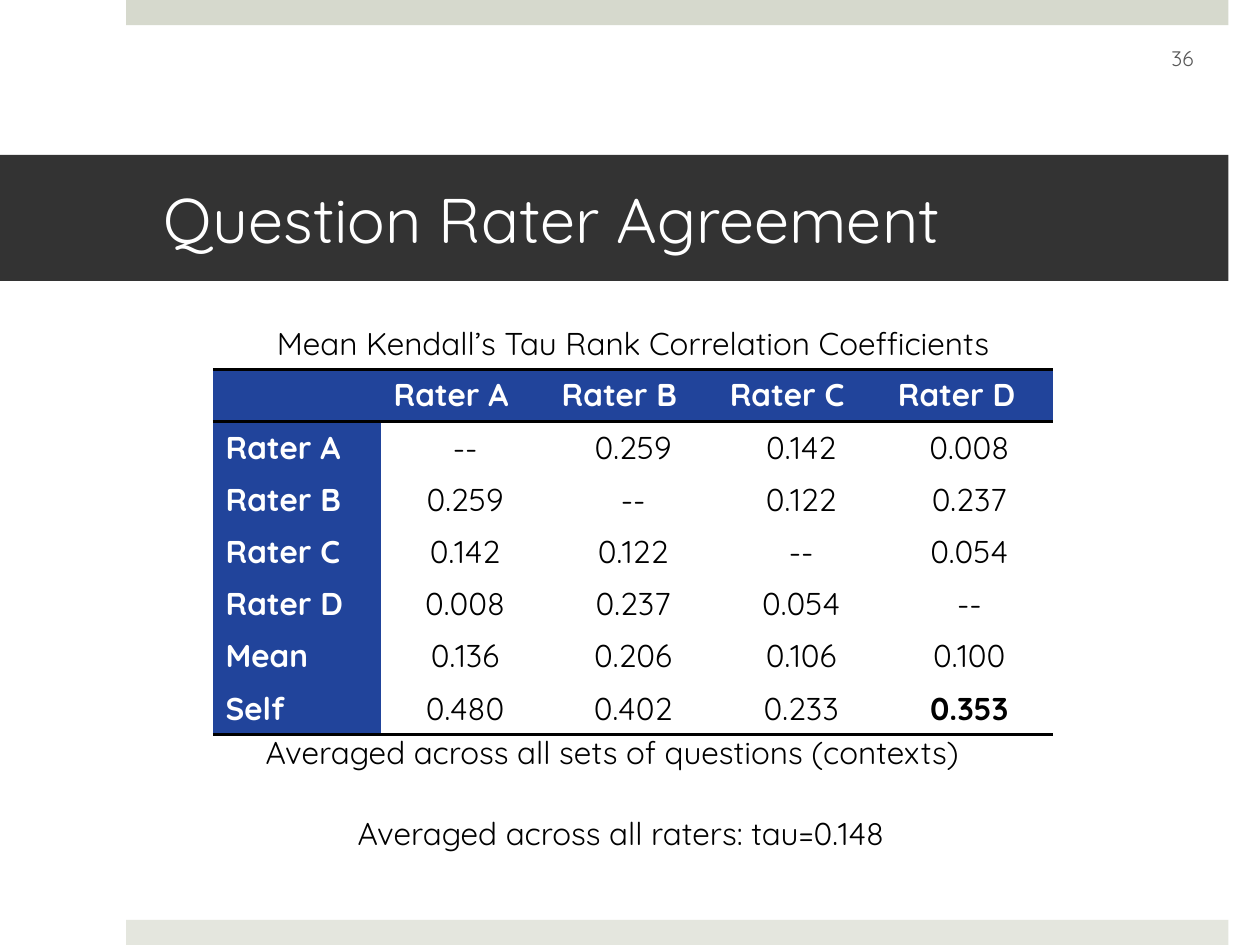
from lxml import etree
from pptx import Presentation
from pptx.dml.color import RGBColor
from pptx.enum.shapes import MSO_SHAPE
from pptx.enum.text import MSO_ANCHOR, PP_ALIGN
from pptx.oxml.ns import qn
from pptx.util import Inches, Pt

RECT = MSO_SHAPE.RECTANGLE
MIDDLE = MSO_ANCHOR.MIDDLE
LEFT, CENTER = PP_ALIGN.LEFT, PP_ALIGN.CENTER

FONT = "Quicksand"
WHITE, BLACK, BLUE = "FFFFFF", "000000", "21449B"
RULE_WIDTH = 2

RATERS = ["Rater A", "Rater B", "Rater C", "Rater D"]
ROWS = [
    [""] + RATERS,
    ["Rater A", "--", "0.259", "0.142", "0.008"],
    ["Rater B", "0.259", "--", "0.122", "0.237"],
    ["Rater C", "0.142", "0.122", "--", "0.054"],
    ["Rater D", "0.008", "0.237", "0.054", "--"],
    ["Mean", "0.136", "0.206", "0.106", "0.100"],
    ["Self", "0.480", "0.402", "0.233", "0.353"],
]
BEST = "0.353"
RULED_EDGES = {0, 1, len(ROWS)}  # horizontal edges, counted from the top


def rgb(color):
    return RGBColor.from_string(color)


def set_text(tf, text, size, color, align=LEFT, bold=False):
    tf.text = text
    p = tf.paragraphs[0]
    p.alignment = align
    for r in p.runs:
        r.font.name = FONT
        r.font.size = Pt(size)
        r.font.bold = bold
        r.font.color.rgb = rgb(color)


def add_bar(slide, left, top, width, height, color):
    sp = slide.shapes.add_shape(RECT, *map(Inches, (left, top, width, height)))
    sp.shadow.inherit = False
    sp.fill.solid()
    sp.fill.fore_color.rgb = rgb(color)
    sp.line.fill.background()
    return sp


def add_label(slide, text, left, top, width, size=18, color=BLACK,
              align=CENTER, wrap=True):
    sp = slide.shapes.add_textbox(*map(Inches, (left, top, width, 0.4)))
    sp.text_frame.word_wrap = wrap
    set_text(sp.text_frame, text, size, color, align)
    return sp


def set_borders(cell, ruled_sides):
    """Draw black rules on the given sides and clear the others."""
    tc_pr = cell._tc.get_or_add_tcPr()
    for i, side in enumerate("LRTB"):
        ln = etree.Element(qn(f"a:ln{side}"), w=str(Pt(RULE_WIDTH)))
        if side in ruled_sides:
            fill = etree.SubElement(ln, qn("a:solidFill"))
            etree.SubElement(fill, qn("a:srgbClr"), val=BLACK)
        else:
            etree.SubElement(ln, qn("a:noFill"))
        tc_pr.insert(i, ln)


def add_rater_table(slide, left, top, width, height):
    n_rows, n_cols = len(ROWS), len(ROWS[0])
    box = map(Inches, (left, top, width, height))
    table = slide.shapes.add_table(n_rows, n_cols, *box).table
    table.horz_banding = False
    for i, values in enumerate(ROWS):
        for j, value in enumerate(values):
            cell = table.cell(i, j)
            heading = i == 0 or j == 0
            cell.fill.solid()
            cell.fill.fore_color.rgb = rgb(BLUE if heading else WHITE)
            set_text(cell.text_frame, value, 18, WHITE if heading else BLACK,
                     LEFT if heading else CENTER, heading or value == BEST)
            edges = {"T": i, "B": i + 1}
            set_borders(cell, [s for s, e in edges.items() if e in RULED_EDGES])


def add_title(slide, text):
    sp = add_bar(slide, 0, 1.23, 9.75, 1, "333333")
    tf = sp.text_frame
    tf.word_wrap = True
    tf.margin_left, tf.margin_right = Inches(1.3), Inches(0.3)
    tf.vertical_anchor = MIDDLE
    set_text(tf, text, 36, WHITE)


def main():
    prs = Presentation()
    prs.slide_width, prs.slide_height = Inches(10), Inches(7.5)
    slide = prs.slides.add_slide(prs.slide_layouts[6])

    add_bar(slide, 1, 0, 8.75, 0.2, "D6D9CD")
    add_bar(slide, 1, 7.3, 8.75, 0.2, "E4E6DE")
    add_title(slide, "Question Rater Agreement")
    number = add_label(slide, "36", 9.08, 0.26, 0.61, 12, "595959")
    number.text_frame.vertical_anchor = MIDDLE

    left, width = 1.69, 6.67
    add_rater_table(slide, left, 2.93, width, 2.9)
    add_label(slide, "Mean Kendall’s Tau Rank Correlation Coefficients",
              left, 2.52, width)
    add_label(slide, "Averaged across all sets of questions (contexts)",
              2.01, 5.77, 5.91, align=LEFT, wrap=False)
    add_label(slide, "Averaged across all raters: tau=0.148",
              2.74, 6.41, 4.6, align=LEFT, wrap=False)
    prs.save("out.pptx")


if __name__ == "__main__":
    main()
